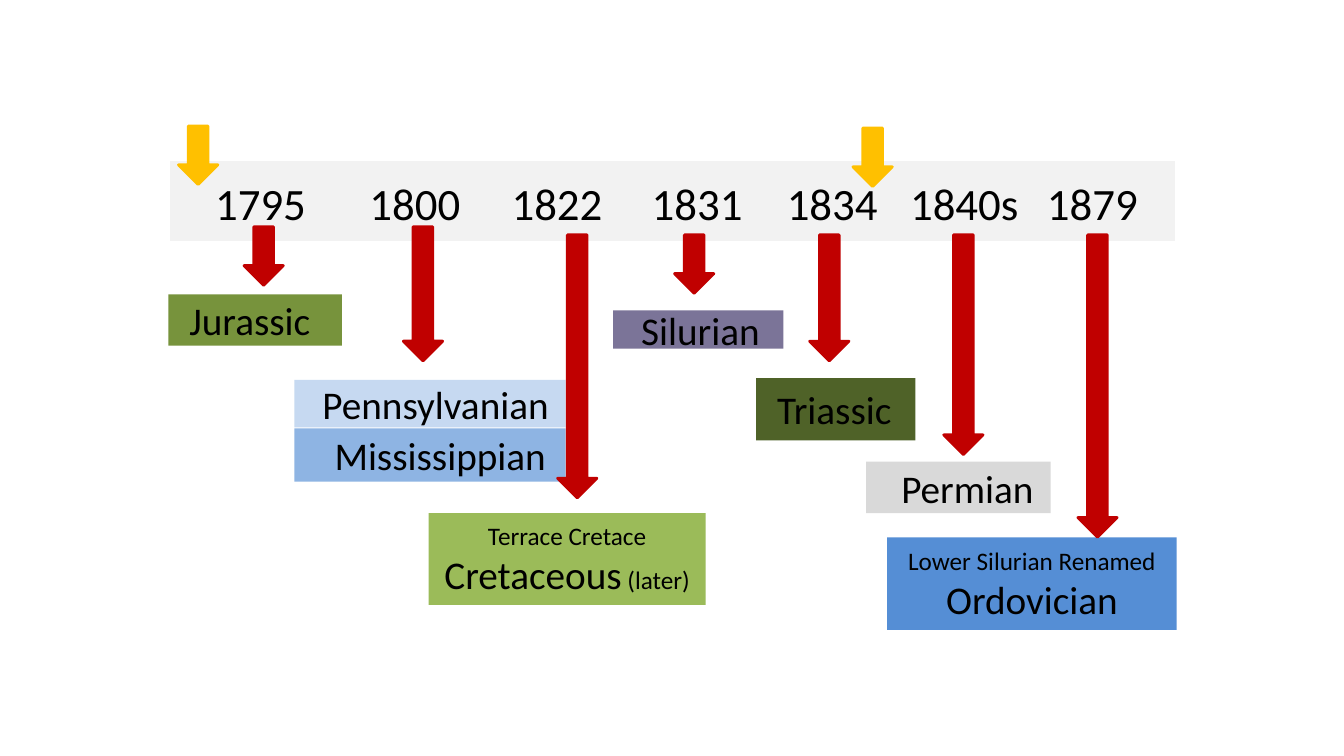
from dataclasses import dataclass

from pptx import Presentation
from pptx.dml.color import RGBColor
from pptx.enum.shapes import MSO_SHAPE as Preset
from pptx.enum.text import MSO_ANCHOR as Anchor, PP_ALIGN as Align
from pptx.util import Inches, Pt


@dataclass(frozen=True)
class Theme:
    font: str = "Calibri"
    ink: str = "000000"
    white: str = "FFFFFF"
    band: str = "F2F2F2"
    red: str = "C00000"
    gold: str = "FFC000"
    jurassic: str = "77933C"
    pennsylvanian: str = "C6D9F1"
    mississippian: str = "8EB4E3"
    cretaceous: str = "9BBB59"
    silurian: str = "7B7498"
    triassic: str = "4F6228"
    permian: str = "D9D9D9"
    ordovician: str = "558ED5"
    year_size: int = 32
    period_size: int = 28
    note_size: int = 18
    outline: int = 2


theme = Theme()


def add_preset(preset, left, top, width, height, fill, line=None):
    shape = page.shapes.add_shape(
        preset, Inches(left), Inches(top), Inches(width), Inches(height))
    shape.shadow.inherit = False
    shape.fill.solid()
    shape.fill.fore_color.rgb = RGBColor.from_string(fill)
    if line:
        shape.line.color.rgb = RGBColor.from_string(line)
        shape.line.width = Pt(theme.outline)
    else:
        shape.line.fill.background()
    return shape


def write(para, text, size=theme.period_size, align=Align.CENTER, indent=0):
    para.alignment = align
    if indent:
        para._p.get_or_add_pPr().set("indent", str(Inches(indent)))
    span = para.add_run()
    span.text = text
    span.font.name = theme.font
    span.font.size = Pt(size)
    span.font.color.rgb = RGBColor.from_string(theme.ink)


deck = Presentation()
deck.slide_width = Inches(13.33)
deck.slide_height = Inches(7.5)
page = deck.slides.add_slide(deck.slide_layouts[6])

periods = [
    ("Jurassic", 1.67, 2.92, 1.72, 0.51, theme.jurassic, Align.LEFT, 0.11),
    ("Pennsylvanian", 2.92, 3.77, 2.69, 0.47, theme.pennsylvanian, Align.LEFT, 0.18),
    ("Mississippian", 2.92, 4.25, 2.69, 0.53, theme.mississippian, Align.CENTER, 0.2),
    ("Silurian", 6.08, 3.08, 1.69, 0.38, theme.silurian, Align.LEFT, 0.18),
    ("Triassic", 7.5, 3.75, 1.58, 0.62, theme.triassic, Align.LEFT, 0.11),
    ("Permian", 8.59, 4.58, 1.83, 0.51, theme.permian, Align.CENTER, 0.18),
]
for name, left, top, width, height, fill, align, indent in periods:
    box = add_preset(Preset.RECTANGLE, left, top, width, height, fill)
    box.text_frame.vertical_anchor = Anchor.MIDDLE
    write(box.text_frame.paragraphs[0], name, align=align, indent=indent)

renamed_periods = [
    ("Terrace Cretace", "Cretaceous", " (later)", 4.25, 5.09, 2.75, 0.91,
     theme.cretaceous, -0.11),
    ("Lower Silurian Renamed", "Ordovician", "", 8.8, 5.33, 2.87, 0.92,
     theme.ordovician, -0.06),
]
for old_name, name, remark, left, top, width, height, fill, indent in renamed_periods:
    box = add_preset(Preset.RECTANGLE, left, top, width, height, fill)
    frame = box.text_frame
    frame.vertical_anchor = Anchor.MIDDLE
    write(frame.paragraphs[0], old_name, size=theme.note_size, indent=indent)
    para = frame.add_paragraph()
    write(para, name)
    if remark:
        write(para, remark, size=theme.note_size)

add_preset(Preset.RECTANGLE, 1.67, 1.58, 10, 0.83, theme.band, line=theme.white)

years = [
    ("1795", 1.92, 1.33),
    ("1800", 3.39, 1.45),
    ("1822", 4.8, 1.45),
    ("1831", 6.33, 1.17),
    ("1834", 7.67, 1.17),
    ("1840s", 8.8, 1.53),
    ("1879", 10.25, 1.17),
]
for year, left, width in years:
    box = page.shapes.add_textbox(
        Inches(left), Inches(1.69), Inches(width), Inches(0.64))
    box.text_frame.word_wrap = True
    write(box.text_frame.paragraphs[0], year, size=theme.year_size)

arrows = [
    (2.42, 2.25, 0.58, theme.red),
    (4, 2.25, 1.33, theme.red),
    (5.53, 2.33, 2.61, theme.red),
    (6.69, 2.33, 0.58, theme.red),
    (8.03, 2.33, 1.25, theme.red),
    (9.36, 2.33, 2.18, theme.red),
    (10.69, 2.33, 3, theme.red),
    (1.77, 1.25, 0.58, theme.gold),
    (8.46, 1.27, 0.58, theme.gold),
]
for left, top, height, color in arrows:
    add_preset(Preset.DOWN_ARROW, left, top, 0.39, height, color, line=color)

deck.save("out.pptx")
